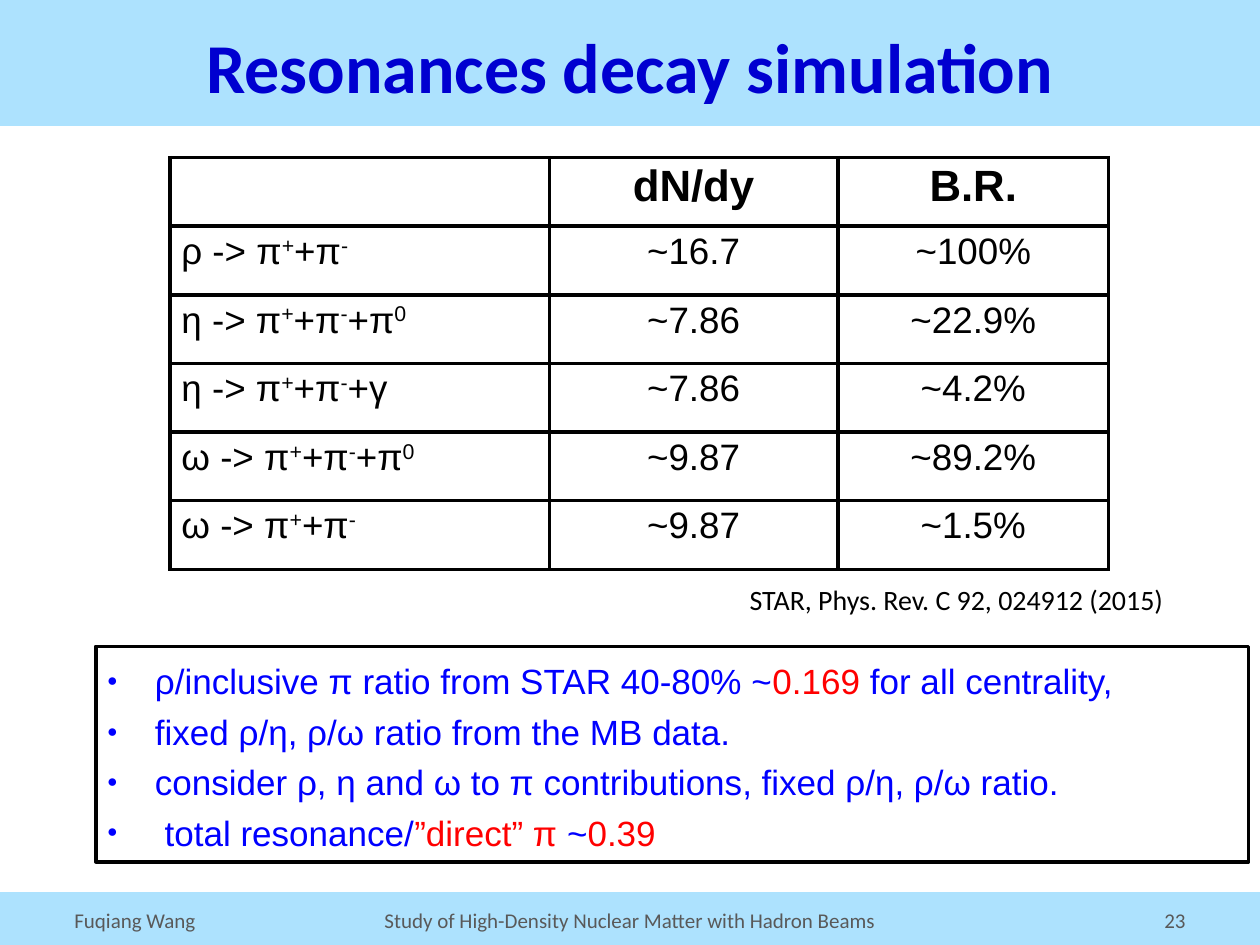
from dataclasses import dataclass

from lxml.etree import SubElement
from pptx import Presentation
from pptx.dml.color import RGBColor
from pptx.enum.shapes import MSO_SHAPE
from pptx.enum.text import MSO_ANCHOR, PP_ALIGN
from pptx.oxml.ns import qn
from pptx.util import Inches, Pt

SKY = RGBColor(0xAD, 0xE2, 0xFE)
NAVY = RGBColor(0x00, 0x00, 0xD0)
BLUE = RGBColor(0x00, 0x00, 0xFF)
RED = RGBColor(0xFF, 0x00, 0x00)
BLACK = RGBColor(0x00, 0x00, 0x00)
WHITE = RGBColor(0xFF, 0xFF, 0xFF)
GREY = RGBColor(0x59, 0x59, 0x59)
LEFT, MID, RIGHT = PP_ALIGN.LEFT, PP_ALIGN.CENTER, PP_ALIGN.RIGHT

# The slide is a grid of 100 columns by 75 rows
COLS, ROWS = 100, 75
UNIT = Inches(0.1)


@dataclass
class Box:
    col: float
    row: float
    wide: float
    high: float

    def place(self) -> list[int]:
        return [round(n * UNIT) for n in (self.col, self.row, self.wide, self.high)]


@dataclass
class Style:
    size: float
    face: str
    color: RGBColor
    align: PP_ALIGN = LEFT
    bold: bool = False


@dataclass
class Note:
    text: str
    box: Box
    style: Style
    wrap: bool = True
    anchor: MSO_ANCHOR = MSO_ANCHOR.MIDDLE


def format_runs(par, style: Style) -> None:
    par.alignment = style.align
    for run in par.runs:
        font = run.font
        font.size, font.name, font.bold = Pt(style.size), style.face, style.bold
        font.color.rgb = style.color


def split_runs(par, text: str) -> list:
    """Make a run of each part between bars; return the marked (odd) ones."""
    for part in text.split("|"):
        if part:
            par.add_run().text = part
    return par.runs[1::2]


def set_inset(item) -> None:
    item.margin_left = item.margin_right = Inches(0.09)
    item.margin_top = item.margin_bottom = Inches(0.04)


def add_rect(slide, box: Box, fill: RGBColor):
    rect = slide.shapes.add_shape(MSO_SHAPE.RECTANGLE, *box.place())
    rect.shadow.inherit = False
    rect.fill.solid()
    rect.fill.fore_color.rgb = fill
    rect.line.fill.background()
    return rect


def add_note(slide, note: Note) -> None:
    frame = slide.shapes.add_textbox(*note.box.place()).text_frame
    set_inset(frame)
    frame.word_wrap = note.wrap
    frame.vertical_anchor = note.anchor
    frame.text = note.text
    format_runs(frame.paragraphs[0], note.style)


def set_border(cell) -> None:
    props = cell._tc.get_or_add_tcPr()
    for side in ("lnL", "lnR", "lnT", "lnB"):
        line = SubElement(props, qn(f"a:{side}"), w=str(Pt(2.25)))
        SubElement(SubElement(line, qn("a:solidFill")), qn("a:srgbClr"), val=str(BLACK))


def set_bullet(par) -> None:
    props = par._p.get_or_add_pPr()
    props.set("marL", str(Inches(0.38)))
    props.set("indent", str(-Inches(0.38)))
    SubElement(props, qn("a:buSzPct"), val="50000")
    SubElement(props, qn("a:buFont"), typeface="Arial")
    SubElement(props, qn("a:buChar"), char="●")


# Bars enclose superscripts in the table and red words in the list
HEAD = ("", "dN/dy", "B.R.")
DECAYS = (
    ("ρ -> π|+|+π|-", "~16.7", "~100%"),
    ("η -> π|+|+π|-|+π|0", "~7.86", "~22.9%"),
    ("η -> π|+|+π|-|+γ", "~7.86", "~4.2%"),
    ("ω -> π|+|+π|-|+π|0", "~9.87", "~89.2%"),
    ("ω -> π|+|+π|-", "~9.87", "~1.5%"),
)
POINTS = (
    "ρ/inclusive π ratio from STAR 40-80% ~|0.169| for all centrality,",
    "fixed ρ/η, ρ/ω ratio from the MB data.",
    "consider ρ, η and ω to π contributions, fixed ρ/η, ρ/ω ratio.",
    " total resonance/|”direct” π |~|0.39",
)
SMALL = (12, "Calibri", GREY)
NOTES = (
    Note("STAR, Phys. Rev. C 92, 024912 (2015)", Box(58.6, 45.8, 35.6, 3.6),
         Style(16, "Calibri", BLACK), False, MSO_ANCHOR.TOP),
    Note("Fuqiang Wang", Box(5, 71, 23.3, 4), Style(*SMALL)),
    Note("Study of High-Density Nuclear Matter with Hadron Beams",
         Box(0, 71, COLS, 4), Style(*SMALL, MID)),
    Note("23", Box(71.7, 71, 23.3, 4), Style(*SMALL, RIGHT)),
)


def add_title(slide, text: str) -> None:
    title = slide.shapes.title
    title.left, title.top, title.width, title.height = Box(0, 1.4, COLS, 7.6).place()
    slide.shapes._spTree.append(title._element)  # in front of the bands
    set_inset(title.text_frame)
    title.text_frame.text = text
    format_runs(title.text_frame.paragraphs[0], Style(40, "Calibri", NAVY, MID, True))


def add_decays(slide) -> None:
    data = (HEAD, *DECAYS)
    box = Box(13.5, 12.5, 74.5, 32.7)
    table = slide.shapes.add_table(len(data), len(HEAD), *box.place()).table
    for col, wide in zip(table.columns, (30.1, 22.9, 21.5)):
        col.width = round(wide * UNIT)
    for i, row in enumerate(data):
        for j, text in enumerate(row):
            cell = table.cell(i, j)
            set_inset(cell)
            set_border(cell)
            cell.fill.solid()
            cell.fill.fore_color.rgb = WHITE
            par = cell.text_frame.paragraphs[0]
            raised = split_runs(par, text)
            format_runs(par, Style(21 if i else 25, "Arial", BLACK,
                                   MID if j else LEFT, i == 0))
            for run in raised:
                run.font._element.set("baseline", "30000")


def add_points(slide) -> None:
    rect = add_rect(slide, Box(7.6, 51.3, 91.5, 17.1), WHITE)
    rect.line.color.rgb = BLACK
    rect.line.width = Pt(2)
    frame = rect.text_frame
    set_inset(frame)
    frame.word_wrap = True
    frame.vertical_anchor = MSO_ANCHOR.TOP
    for i, text in enumerate(POINTS):
        par = frame.add_paragraph() if i else frame.paragraphs[0]
        marked = split_runs(par, text)
        format_runs(par, Style(20, "Arial", BLUE))
        par.line_spacing = 1.2
        set_bullet(par)
        for run in marked:
            run.font.color.rgb = RED


def main() -> None:
    deck = Presentation()
    deck.slide_width, deck.slide_height = COLS * UNIT, ROWS * UNIT
    slide = deck.slides.add_slide(deck.slide_layouts[5])
    # Bands at the foot and head
    for band in (Box(0, 70.8, COLS, 4.2), Box(0, 0, COLS, 10)):
        add_rect(slide, band, SKY)
    add_title(slide, "Resonances decay simulation")
    # Body
    add_decays(slide)
    add_points(slide)
    # Source and footer
    for note in NOTES:
        add_note(slide, note)
    deck.save("out.pptx")


if __name__ == "__main__":
    main()
